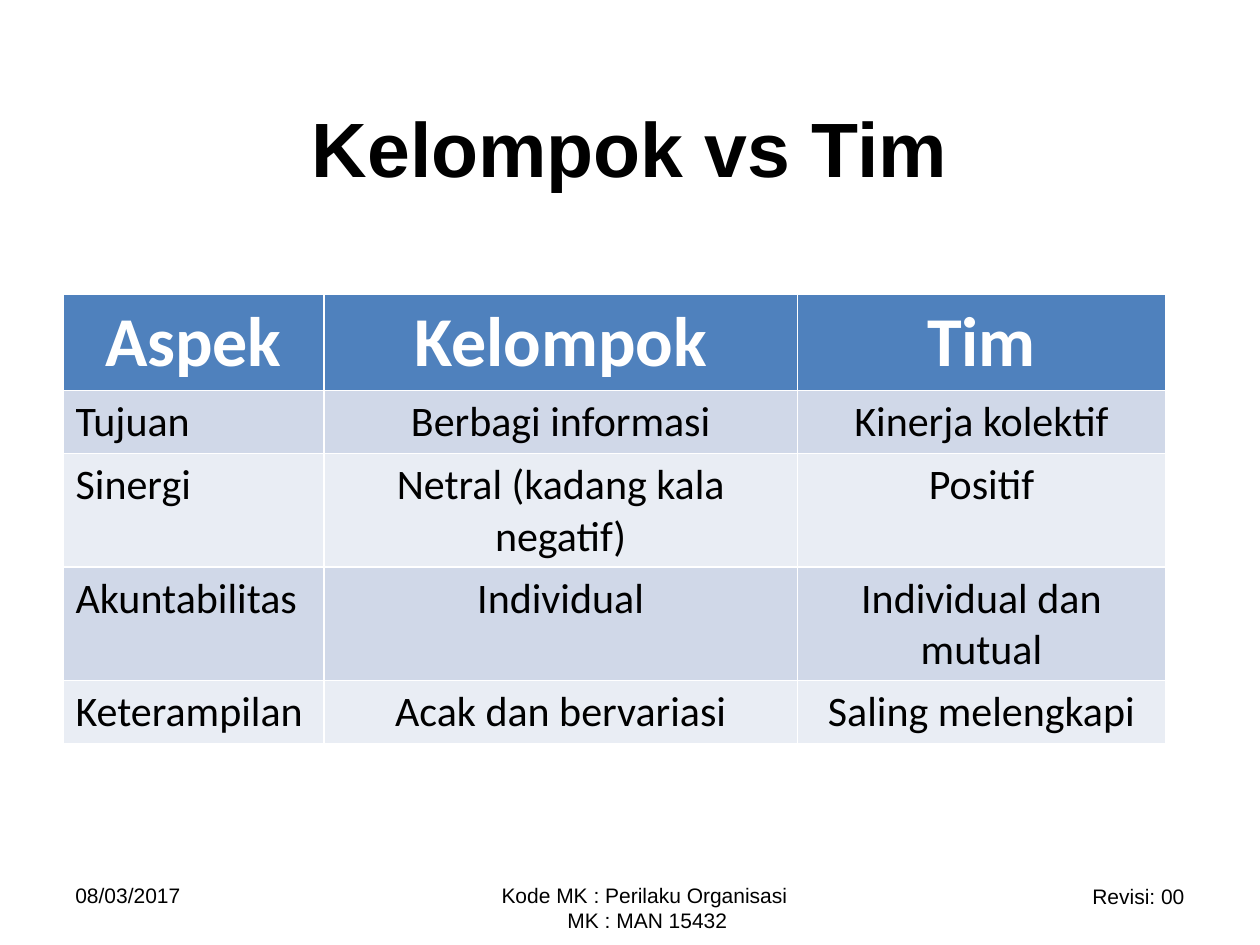
from dataclasses import dataclass

from pptx import Presentation
from pptx import util as u
from pptx.dml.color import RGBColor
from pptx.enum import text

WIDTH, HEIGHT = 10, 7.5
BLACK, WHITE = "000000", "FFFFFF"
HEADER_FILL, BANDS = "4F81BD", ("D0D8E8", "E9EDF4")
LEFT, CENTER, RIGHT = text.PP_ALIGN.LEFT, text.PP_ALIGN.CENTER, text.PP_ALIGN.RIGHT
COLUMN_WIDTHS = (2.07, 3.76, 2.92)
ROW_HEIGHT = 0.41
ROWS = (
    ("Aspek", "Kelompok", "Tim"),
    ("Tujuan", "Berbagi informasi", "Kinerja kolektif"),
    ("Sinergi", "Netral (kadang kala negatif)", "Positif"),
    ("Akuntabilitas", "Individual", "Individual dan mutual"),
    ("Keterampilan", "Acak dan bervariasi", "Saling melengkapi"),
)


@dataclass(frozen=True)
class Box:
    """A rectangle given as shares of the slide's size."""
    left: float
    top: float
    width: float
    height: float

    def lengths(self) -> tuple:
        """Return left, top, width and height as lengths."""
        return (u.Inches(self.left * WIDTH), u.Inches(self.top * HEIGHT),
                u.Inches(self.width * WIDTH), u.Inches(self.height * HEIGHT))


@dataclass(frozen=True)
class FooterNote:
    """A line of small text at the foot of the slide."""
    lines: tuple
    box: Box
    align: text.PP_ALIGN


TITLE_BOX = Box(0.05, 0.09, 0.9, 0.13)
TABLE_BOX = Box(0.05, 0.311, 0.875, 0.27)
FOOTER_NOTES = (
    FooterNote(("Revisi: 00",), Box(0.717, 0.928, 0.233, 0.04), RIGHT),
    FooterNote(("08/03/2017",), Box(0.05, 0.927, 0.233, 0.053), LEFT),
    FooterNote(("Kode MK : Perilaku Organisasi", " MK : MAN 15432"),
               Box(0.342, 0.927, 0.339, 0.053), CENTER),
)


def color(value: str) -> RGBColor:
    """Turn a hex string into a colour."""
    return RGBColor.from_string(value)


def write(frame, *lines: str, size: float, font: str = "Arial", fill: str = BLACK,
          bold: bool = False, align=LEFT) -> None:
    """Write one paragraph per line with a shared format."""
    for index, line in enumerate(lines):
        paragraph = frame.paragraphs[0] if index == 0 else frame.add_paragraph()
        paragraph.alignment = align
        run = paragraph.add_run()
        run.text = line
        run.font.name, run.font.size, run.font.bold = font, u.Pt(size), bold
        run.font.color.rgb = color(fill)


def add_title(slide) -> None:
    """Place and format the title placeholder."""
    title = slide.shapes.title
    title.left, title.top, title.width, title.height = TITLE_BOX.lengths()
    title.text_frame.vertical_anchor = text.MSO_ANCHOR.MIDDLE
    write(title.text_frame, "Kelompok vs Tim", size=44, bold=True, align=CENTER)


def add_footer_note(slide, note: FooterNote) -> None:
    """Add one footer text box."""
    frame = slide.shapes.add_textbox(*note.box.lengths()).text_frame
    frame.word_wrap = True
    write(frame, *note.lines, size=12, align=note.align)


def add_comparison(slide) -> None:
    """Add the table that compares groups and teams."""
    table = slide.shapes.add_table(len(ROWS), len(COLUMN_WIDTHS), *TABLE_BOX.lengths()).table
    for column, width in zip(table.columns, COLUMN_WIDTHS):
        column.width = u.Inches(width)
    for row_index, values in enumerate(ROWS):
        table.rows[row_index].height = u.Inches(ROW_HEIGHT)
        header = row_index == 0
        for column_index, value in enumerate(values):
            cell = table.cell(row_index, column_index)
            cell.fill.solid()
            cell.fill.fore_color.rgb = color(HEADER_FILL if header else BANDS[(row_index - 1) % 2])
            write(cell.text_frame, value, size=40 if header else 24, font="Calibri",
                  fill=WHITE if header else BLACK, bold=header,
                  align=CENTER if header or column_index else LEFT)


def main() -> None:
    """Build and save the slide."""
    presentation = Presentation()
    presentation.slide_width, presentation.slide_height = u.Inches(WIDTH), u.Inches(HEIGHT)
    slide = presentation.slides.add_slide(presentation.slide_layouts.get_by_name("Title Only"))
    add_title(slide)
    for note in FOOTER_NOTES:
        add_footer_note(slide, note)
    add_comparison(slide)
    presentation.save("out.pptx")


if __name__ == "__main__":
    main()
